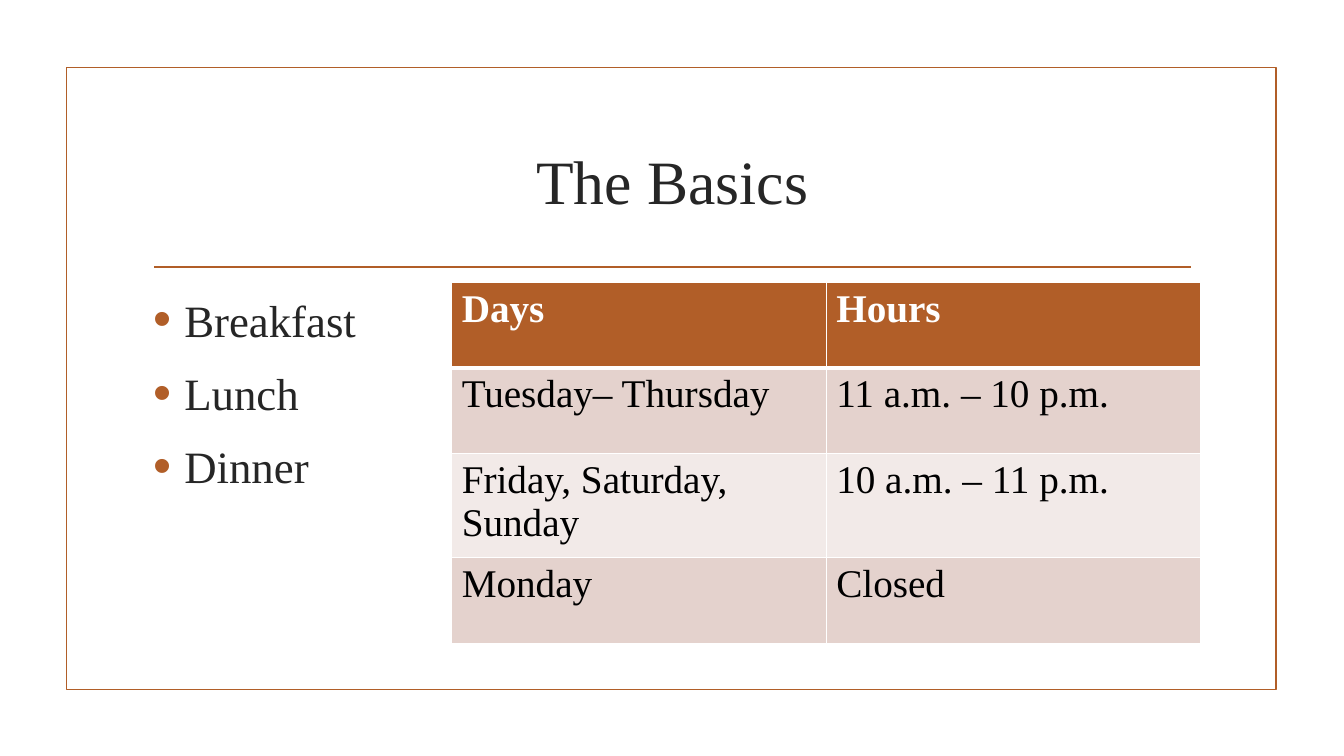
from lxml import etree
from pptx import Presentation
from pptx import util as u
from pptx.dml.color import RGBColor
from pptx.enum import shapes, text
from pptx.oxml.ns import qn

COLORS = {"rust": "B15E28", "ink": "262626", "black": "000000",
          "white": "FFFFFF", "rose": "E4D2CD", "pale": "F2EAE8"}
HOURS = [("Days", "Hours"),
         ("Tuesday– Thursday", "11 a.m. – 10 p.m."),
         ("Friday, Saturday, Sunday", "10 a.m. – 11 p.m."),
         ("Monday", "Closed")]
MEALS = ["Breakfast", "Lunch", "Dinner"]


class SlideBuilder:
    font = "Times New Roman"
    line_width = u.Pt(1.25)

    def __init__(self, deck):
        self.width, self.height = deck.slide_width, deck.slide_height
        self.slide = deck.slides.add_slide(deck.slide_layouts[6])

    def color(self, name):
        return RGBColor.from_string(COLORS[name])

    def place(self, left, top, width, height):
        return (round(left * self.width), round(top * self.height),
                round(width * self.width), round(height * self.height))

    def frame(self, *area):
        box = self.slide.shapes.add_shape(shapes.MSO_SHAPE.RECTANGLE, *self.place(*area))
        box.shadow.inherit = False
        box.fill.background()
        box.line.color.rgb = self.color("rust")
        box.line.width = self.line_width

    def rule(self, left, right, top):
        x1, y, x2, _ = self.place(left, top, right, top)
        line = self.slide.shapes.add_connector(shapes.MSO_CONNECTOR.STRAIGHT, x1, y, x2, y)
        line.line.color.rgb = self.color("rust")
        line.line.width = self.line_width
        etree.SubElement(line._element.spPr, qn("a:effectLst"))

    def add_span(self, para, words, size, color, bold=False):
        span = para.add_run()
        span.text = words
        span.font.name = self.font
        span.font.size = u.Pt(size)
        span.font.bold = bold
        span.font.color.rgb = self.color(color)

    def text_box(self, area, anchor):
        box = self.slide.shapes.add_textbox(*self.place(*area))
        box.text_frame.word_wrap = True
        box.text_frame.vertical_anchor = anchor
        return box.text_frame

    def title(self, words, *area):
        para = self.text_box(area, text.MSO_ANCHOR.MIDDLE).paragraphs[0]
        para.alignment = text.PP_ALIGN.CENTER
        self.add_span(para, words, 44, "ink")

    def bullet(self, para):
        props = para._p.get_or_add_pPr()
        indent = u.Inches(0.31)
        props.set("marL", str(indent))
        props.set("indent", str(-indent))
        tint = etree.SubElement(props, qn("a:buClr"))
        etree.SubElement(tint, qn("a:srgbClr"), val=COLORS["rust"])
        etree.SubElement(props, qn("a:buSzPct"), val="115000")
        etree.SubElement(props, qn("a:buFont"), typeface="Arial")
        etree.SubElement(props, qn("a:buChar"), char="•")

    def bullets(self, items, *area):
        frame = self.text_box(area, text.MSO_ANCHOR.TOP)
        for index, words in enumerate(items):
            para = frame.add_paragraph() if index else frame.paragraphs[0]
            self.bullet(para)
            para.space_before = u.Pt(8 if index else 0)
            para.space_after = u.Pt(6)
            self.add_span(para, words, 32, "ink")

    def borders(self, cell, header):
        props = cell._tc.get_or_add_tcPr()
        widths = {"lnL": 1, "lnR": 1, "lnT": 1, "lnB": 3 if header else 1}
        for position, (side, width) in enumerate(widths.items()):
            edge = etree.Element(qn(f"a:{side}"), w=str(u.Pt(width)))
            fill = etree.SubElement(edge, qn("a:solidFill"))
            etree.SubElement(fill, qn("a:srgbClr"), val=COLORS["white"])
            props.insert(position, edge)

    def table(self, rows, *area):
        grid = self.slide.shapes.add_table(len(rows), len(rows[0]), *self.place(*area)).table
        for r, row in enumerate(rows):
            header = r == 0
            fill = "rust" if header else ("pale", "rose")[r % 2]
            for c, words in enumerate(row):
                cell = grid.cell(r, c)
                cell.fill.solid()
                cell.fill.fore_color.rgb = self.color(fill)
                self.borders(cell, header)
                self.add_span(cell.text_frame.paragraphs[0], words, 28,
                              "white" if header else "black", header)


def main():
    deck = Presentation()
    deck.slide_width, deck.slide_height = u.Inches(13.33), u.Inches(7.5)
    page = SlideBuilder(deck)
    across, down = 1 / 13.33, 1 / 7.5
    page.frame(0.66 * across, 0.67 * down, 12 * across, 6.17 * down)
    page.rule(1.53 * across, 11.81 * across, 2.65 * down)
    page.title("The Basics", 1.42 * across, 1.07 * down, 10.5 * across, 1.43 * down)
    page.bullets(MEALS, 1.42 * across, 2.85 * down, 3 * across, 3.58 * down)
    page.table(HOURS, 4.48 * across, 2.8 * down, 7.43 * across, 3.4 * down)
    deck.save("out.pptx")


if __name__ == "__main__":
    main()
